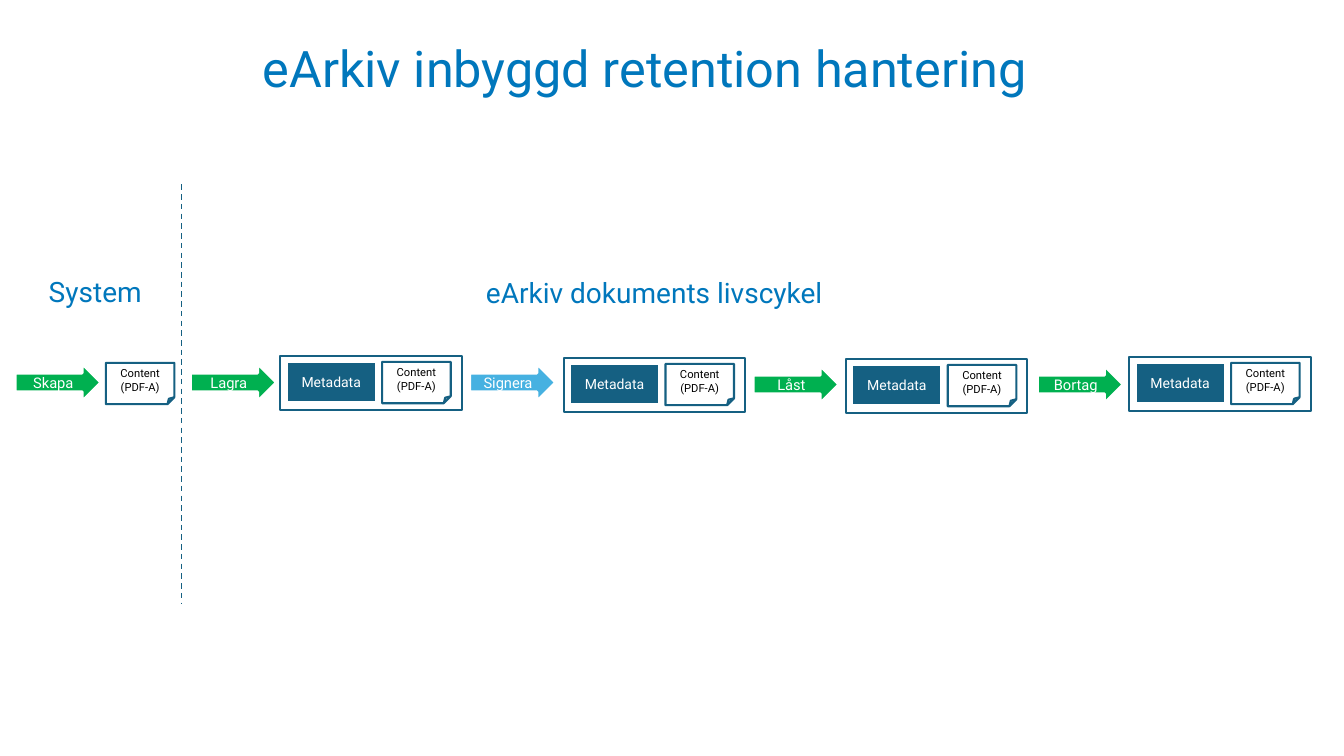
from lxml import etree
from pptx import Presentation
from pptx.dml.color import RGBColor
from pptx.enum.dml import MSO_LINE
from pptx.enum.shapes import MSO_CONNECTOR, MSO_SHAPE
from pptx.enum.text import MSO_ANCHOR, MSO_AUTO_SIZE, PP_ALIGN
from pptx.oxml.ns import qn
from pptx.util import Inches, Pt

RECTANGLE = MSO_SHAPE.RECTANGLE
FOLDED_CORNER = MSO_SHAPE.FOLDED_CORNER
RIGHT_ARROW = MSO_SHAPE.RIGHT_ARROW
STRAIGHT = MSO_CONNECTOR.STRAIGHT
DASH = MSO_LINE.DASH
CENTER = PP_ALIGN.CENTER
MIDDLE = MSO_ANCHOR.MIDDLE
FIT_SHAPE = MSO_AUTO_SIZE.SHAPE_TO_FIT_TEXT

WHITE = RGBColor(0xFF, 0xFF, 0xFF)
BLACK = RGBColor(0x00, 0x00, 0x00)
HEADING_BLUE = RGBColor(0x00, 0x77, 0xBC)
TEAL = RGBColor(0x15, 0x60, 0x82)
GREEN = RGBColor(0x00, 0xB0, 0x50)
SKY_BLUE = RGBColor(0x46, 0xB1, 0xE1)


def write_text(box, text, size, color):
    frame = box.text_frame
    frame.word_wrap = True
    para = frame.paragraphs[0]
    para.alignment = CENTER
    span = para.add_run()
    span.text = text
    span.font.name = "Roboto"
    span.font.size = Pt(size)
    span.font.color.rgb = color


def add_box(parent, kind, left, top, width, height, text="", size=10,
            color=WHITE, fill=WHITE, line=TEAL, line_width=1.5):
    box = parent.add_shape(kind, Inches(left), Inches(top), Inches(width), Inches(height))
    box.shadow.inherit = False
    box.fill.solid()
    box.fill.fore_color.rgb = fill
    box.line.color.rgb = line
    box.line.width = Pt(line_width)
    if text:
        write_text(box, text, size, color)
        box.text_frame.vertical_anchor = MIDDLE


deck = Presentation()
deck.slide_width = Inches(13.33)
deck.slide_height = Inches(7.5)
page = deck.slides.add_slide(deck.slide_layouts[6])

# Title and section headings
headings = [
    ("eArkiv inbyggd retention hantering", 2.32, 0.32, 8.15, 0.71, 36),
    ("System", 0.09, 2.67, 1.71, 0.44, 20),
    ("eArkiv dokuments livscykel", 3.74, 2.68, 5.5, 0.44, 20),
]
for text, left, top, width, height, size in headings:
    heading = page.shapes.add_textbox(Inches(left), Inches(top), Inches(width), Inches(height))
    write_text(heading, text, size, HEADING_BLUE)
    heading.text_frame.auto_size = FIT_SHAPE

# Content made in the source system
content = dict(text="Content (PDF-A)", size=8, color=BLACK)
add_box(page.shapes, FOLDED_CORNER, 1.05, 3.6, 0.68, 0.41, **content)

# Archived documents: metadata and content inside a frame
for left, top in [(2.78, 3.53), (5.59, 3.55), (8.39, 3.56), (11.2, 3.54)]:
    document = page.shapes.add_group_shape().shapes
    add_box(document, RECTANGLE, left, top, 1.8, 0.54)
    add_box(document, FOLDED_CORNER, left + 1.01, top + 0.06, 0.68, 0.41, **content)
    add_box(document, RECTANGLE, left + 0.06, top + 0.06, 0.89, 0.4,
            text="Metadata", fill=TEAL, line=WHITE, line_width=2)

# Life cycle steps
steps = [
    ("Skapa", 0.15, 3.61, GREEN),
    ("Lagra", 1.89, 3.61, GREEN),
    ("Signera", 4.66, 3.61, SKY_BLUE),
    ("Låst", 7.47, 3.63, GREEN),
    ("Bortag", 10.29, 3.63, GREEN),
]
for text, left, top, fill in steps:
    add_box(page.shapes, RIGHT_ARROW, left, top, 0.85, 0.37,
            text=text, size=10.5, fill=fill, line=WHITE, line_width=2)

# Border between the system and the archive
border = page.shapes.add_connector(STRAIGHT, Inches(1.8), Inches(1.83), Inches(1.8), Inches(5.98))
border.line.color.rgb = TEAL
border.line.width = Pt(1)
border.line.dash_style = DASH
etree.SubElement(border._element.spPr, qn("a:effectLst"))

deck.save("out.pptx")
